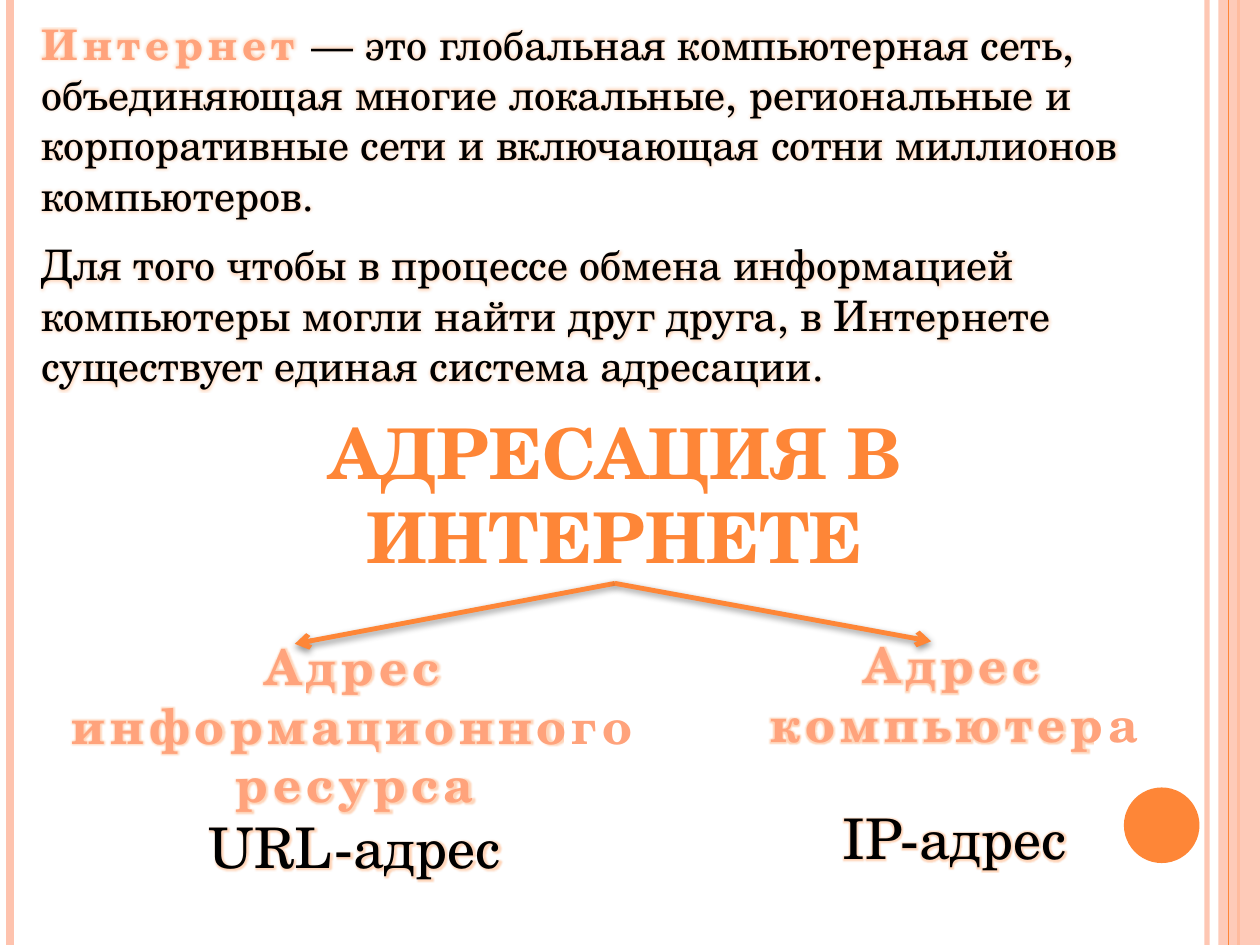
from dataclasses import dataclass
from lxml.etree import SubElement
from pptx import Presentation
from pptx.dml.color import RGBColor
from pptx.enum.shapes import MSO_CONNECTOR, MSO_SHAPE
from pptx.enum.text import MSO_ANCHOR, MSO_AUTO_SIZE, PP_ALIGN
from pptx.oxml.ns import qn
from pptx.util import Inches, Pt

FONT = "TeX Gyre Schola"
ORANGE = "FE8637"
PINK = "FEC3AE"
PEACH = "FFA37C"
BLACK = "000000"


@dataclass
class Stripe:
    left: float
    color: str
    weight: float
    alpha: int = 100


@dataclass
class Phrase:
    text: str
    size: float
    accent: bool = False


@dataclass
class Passage:
    phrases: list[Phrase]
    space_before: float = 0


@dataclass
class TextBlock:
    left: float
    top: float
    width: float
    height: float
    passages: list[Passage]
    align: PP_ALIGN = PP_ALIGN.CENTER
    anchor: MSO_ANCHOR = MSO_ANCHOR.TOP


def paint(color_format, color: str) -> None:
    color_format.rgb = RGBColor.from_string(color)


def paint_fill(fill, color: str, alpha: int = 100) -> None:
    fill.solid()
    paint(fill.fore_color, color)
    if alpha < 100:
        add_alpha(fill._xPr.find(".//" + qn("a:srgbClr")), alpha)


def add_alpha(color_element, alpha: int) -> None:
    SubElement(color_element, qn("a:alpha"), val=str(alpha * 1000))


def add_effect(parent, name: str, color: str, alpha: int, **settings: str) -> None:
    effects = SubElement(parent, qn("a:effectLst"))
    effect = SubElement(effects, qn(name), **settings)
    add_alpha(SubElement(effect, qn("a:srgbClr"), val=color), alpha)


def draw_line(page, start: tuple, end: tuple, color: str, weight: float, alpha: int = 100):
    line = page.shapes.add_connector(
        MSO_CONNECTOR.STRAIGHT, *(Inches(value) for value in start + end)
    )
    line.line.width = Pt(weight)
    paint_fill(line.line.fill, color, alpha)
    return line


def draw_stripe(page, stripe: Stripe) -> None:
    line = draw_line(
        page, (stripe.left, 0), (stripe.left, 7.5), stripe.color, stripe.weight, stripe.alpha
    )
    SubElement(line._element.spPr, qn("a:effectLst"))


def draw_arrow(page, title, end: tuple) -> None:
    arrow = draw_line(page, (4.88, 4.63), end, ORANGE, 2.75)
    arrow.begin_connect(title, 2)
    SubElement(arrow.line._get_or_add_ln(), qn("a:tailEnd"), type="arrow")
    add_effect(
        arrow._element.spPr, "a:outerShdw", BLACK, 42,
        blurRad=str(Pt(4)), dist=str(Pt(1.6)), dir="5400000",
    )


def draw_plain_shape(page, kind: MSO_SHAPE, place: tuple, color: str, alpha: int = 100) -> None:
    shape = page.shapes.add_shape(kind, *(Inches(value) for value in place))
    shape.shadow.inherit = False
    paint_fill(shape.fill, color, alpha)
    shape.line.fill.background()


def write_phrase(para, phrase: Phrase) -> None:
    span = para.add_run()
    span.text = phrase.text
    span.font.size = Pt(phrase.size)
    span.font.bold = phrase.accent
    paint_fill(span.font.fill, PEACH if phrase.accent else BLACK)
    properties = span._r.get_or_add_rPr()
    if phrase.accent:
        properties.set("spc", "300")
    add_effect(properties, "a:glow", ORANGE, 35, rad=str(Pt(3.5)))
    span.font.name = FONT


def draw_text(page, block: TextBlock) -> None:
    box = page.shapes.add_textbox(
        Inches(block.left), Inches(block.top), Inches(block.width), Inches(block.height)
    )
    frame = box.text_frame
    frame.word_wrap = True
    frame.vertical_anchor = block.anchor
    for index, passage in enumerate(block.passages):
        para = frame.add_paragraph() if index else frame.paragraphs[0]
        para.alignment = block.align
        if passage.space_before:
            para.space_before = Pt(passage.space_before)
        for phrase in passage.phrases:
            write_phrase(para, phrase)


def place_title(page, text: str):
    title = page.shapes.title
    title.left, title.top = Inches(0.7), Inches(3.2)
    title.width, title.height = Inches(8.36), Inches(1.43)
    frame = title.text_frame
    frame.text = text
    frame.word_wrap = True
    frame.auto_size = MSO_AUTO_SIZE.NONE
    frame.vertical_anchor = MSO_ANCHOR.TOP
    para = frame.paragraphs[0]
    para.alignment = PP_ALIGN.CENTER
    para.font.name = FONT
    para.font.size = Pt(40)
    para.font.bold = True
    paint(para.font.color, ORANGE)
    return title


STRIPES_BELOW = [Stripe(9.58, PINK, 3, 93), Stripe(0.08, PINK, 4.5), Stripe(9.83, ORANGE, 1.5)]
STRIPE_ABOVE = Stripe(9.75, ORANGE, 0.75)

DEFINITION = TextBlock(0.23, 0.08, 9.14, 3.08, [
    Passage([
        Phrase("Интернет", 24, accent=True),
        Phrase(" — это глобальная компьютерная сеть, объединяющая многие локальные, "
               "региональные и корпоративные сети и включающая сотни миллионов компьютеров.", 24),
    ]),
    Passage([
        Phrase("Для того чтобы в процессе обмена информацией компьютеры могли найти друг друга, "
               "в Интернете существует единая система адресации.", 24),
    ], space_before=11),
], PP_ALIGN.LEFT, MSO_ANCHOR.MIDDLE)

COMPUTER_ADDRESS = TextBlock(5.7, 4.99, 3.75, 1.99, [
    Passage([Phrase("Адрес компьютера", 28, accent=True)]),
    Passage([Phrase("IP-адрес", 32)], space_before=29),
])

RESOURCE_ADDRESS = TextBlock(0, 5, 5.63, 2.05, [
    Passage([Phrase("Адрес информационного ресурса", 28, accent=True)]),
    Passage([Phrase("URL-адрес", 32)]),
])


def main() -> None:
    deck = Presentation()
    deck.slide_width, deck.slide_height = Inches(10), Inches(7.5)
    page = deck.slides.add_slide(deck.slide_layouts[5])
    for stripe in STRIPES_BELOW:
        draw_stripe(page, stripe)
    draw_plain_shape(page, MSO_SHAPE.RECTANGLE, (9.67, 0, 0.33, 7.5), PINK, 87)
    draw_stripe(page, STRIPE_ABOVE)
    draw_plain_shape(page, MSO_SHAPE.OVAL, (8.92, 6.25, 0.6, 0.6), ORANGE)
    draw_text(page, DEFINITION)
    title = place_title(page, "АДРЕСАЦИЯ В ИНТЕРНЕТЕ")
    for end in [(2.34, 5.11), (7.39, 5.09)]:
        draw_arrow(page, title, end)
    for block in [COMPUTER_ADDRESS, RESOURCE_ADDRESS]:
        draw_text(page, block)
    deck.save("out.pptx")


if __name__ == "__main__":
    main()
